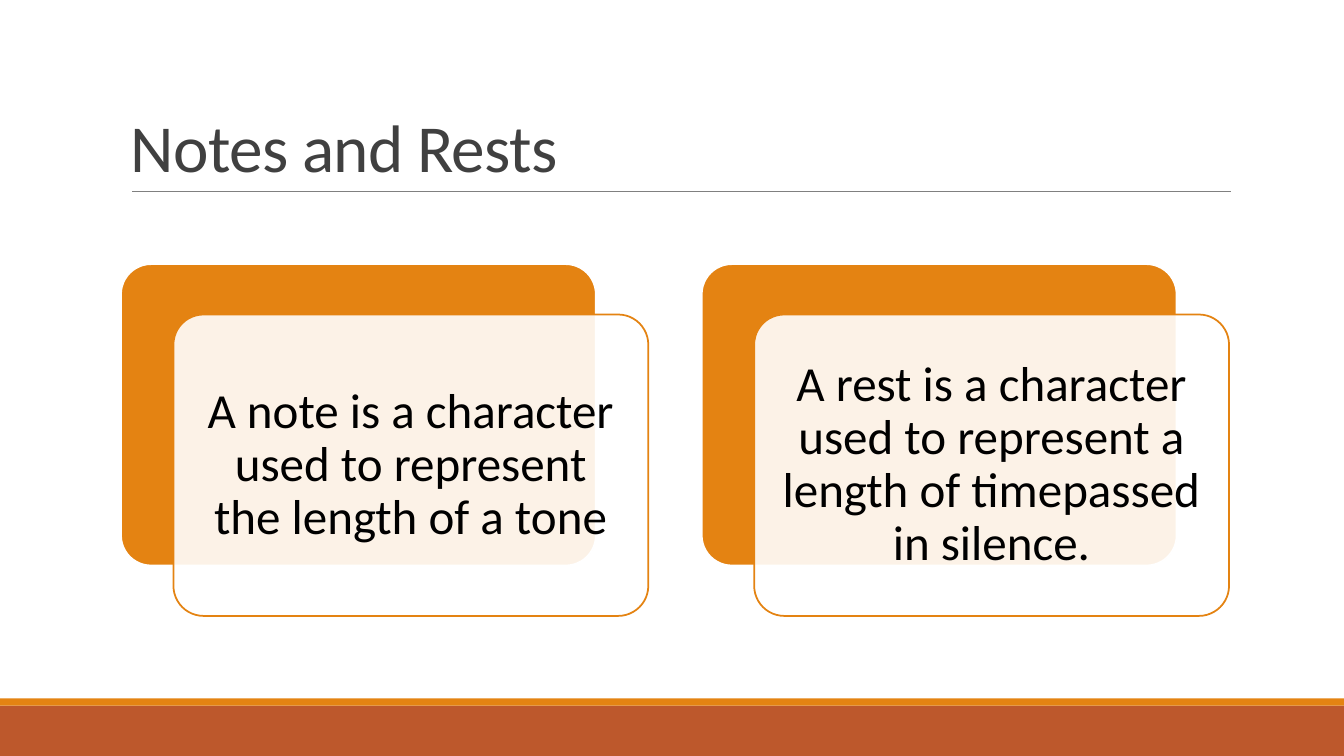
import pptx
import pptx.util
import pptx.dml.color
import pptx.enum.shapes
import pptx.enum.text
from lxml import etree

Inches = pptx.util.Inches
Pt = pptx.util.Pt
Shape = pptx.enum.shapes.MSO_SHAPE
Anchor = pptx.enum.text.MSO_ANCHOR
Align = pptx.enum.text.PP_ALIGN
A = "{http://schemas.openxmlformats.org/drawingml/2006/main}"

ORANGE = "E48312"
RUST = "BD582C"
WHITE = "FFFFFF"


def color(code):
    return pptx.dml.color.RGBColor.from_string(code)


class Deck:
    font = "Calibri"

    def __init__(self):
        self.file = pptx.Presentation()
        self.file.slide_width = Inches(13.33)
        self.file.slide_height = Inches(7.5)
        self.slide = self.file.slides.add_slide(self.file.slide_layouts[6])

    def box(self, kind, left, top, width, height, fill, line=None, alpha=None):
        """Add a filled shape; alpha is its opacity in percent."""
        shape = self.slide.shapes.add_shape(
            kind, Inches(left), Inches(top), Inches(width), Inches(height))
        shape.shadow.inherit = False
        shape.fill.solid()
        shape.fill.fore_color.rgb = color(fill)
        if alpha:
            tint = shape.fill._xPr.find(f"{A}solidFill/{A}srgbClr")
            etree.SubElement(tint, A + "alpha", val=str(alpha * 1000))
        if line:
            shape.line.color.rgb = color(line)
            shape.line.width = Pt(1.25)
        else:
            shape.line.fill.background()
        if kind == Shape.ROUNDED_RECTANGLE:
            shape.adjustments[0] = 0.1

    def rule(self, left, right, top, tone):
        line = self.slide.shapes.add_connector(
            pptx.enum.shapes.MSO_CONNECTOR.STRAIGHT,
            Inches(left), Inches(top), Inches(right), Inches(top))
        line.line.color.rgb = color(tone)
        line.line.width = Pt(0.5)
        etree.SubElement(line._element.spPr, A + "effectLst")

    def text(self, words, left, top, width, height, size, tone, anchor,
             align, leading, pad=(0.1, 0.05), track=None):
        """Add a paragraph; pad is (side, end) and track is in points."""
        box = self.slide.shapes.add_textbox(
            Inches(left), Inches(top), Inches(width), Inches(height))
        frame = box.text_frame
        frame.word_wrap = True
        frame.vertical_anchor = anchor
        frame.margin_left = frame.margin_right = Inches(pad[0])
        frame.margin_top = frame.margin_bottom = Inches(pad[1])
        para = frame.paragraphs[0]
        run = para.add_run()
        run.text = words
        para.alignment = align
        para.line_spacing = leading
        para.font.name = self.font
        para.font.size = Pt(size)
        para.font.color.rgb = color(tone)
        if track:
            run.font._element.set("spc", str(int(track * 100)))

    def card(self, words, left, top):
        """Add an orange panel with a pale panel and text in front."""
        width, height = 4.71, 2.99
        kind = Shape.ROUNDED_RECTANGLE
        self.box(kind, left, top, width, height, ORANGE, WHITE)
        left, top = left + 0.52, top + 0.5
        self.box(kind, left, top, width, height, WHITE, ORANGE, alpha=90)
        inset = 0.09
        self.text(words, left + inset, top + inset, width - 2 * inset,
                  height - 2 * inset, 35, "000000", Anchor.MIDDLE,
                  Align.CENTER, 0.9, pad=(0.15, 0.15))


def main():
    deck = Deck()
    deck.box(Shape.RECTANGLE, 0, 7, 13.33, 0.5, RUST)
    deck.box(Shape.RECTANGLE, 0, 6.93, 13.33, 0.07, ORANGE)
    deck.rule(1.31, 12.21, 1.9, "808080")
    deck.text("Notes and Rests", 1.2, 0.31, 11, 1.59, 48, "404040",
              Anchor.BOTTOM, Align.LEFT, 0.85, track=-0.5)
    cards = (
        "A note is a character used to represent the length of a tone",
        "A rest is a character used to represent a length of timepassed "
        "in silence.",
    )
    for i, words in enumerate(cards):
        deck.card(words, 1.2 + i * 5.76, 2.62)
    deck.file.save("out.pptx")


if __name__ == "__main__":
    main()
